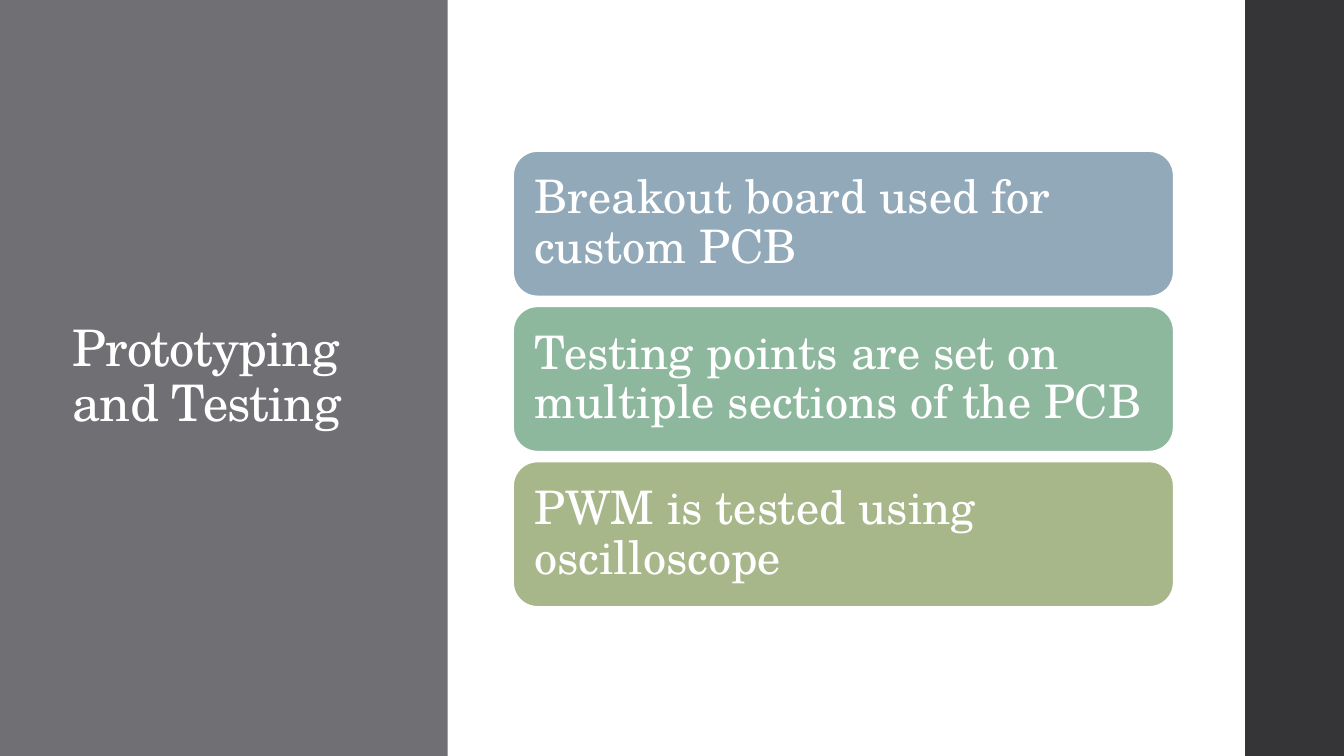
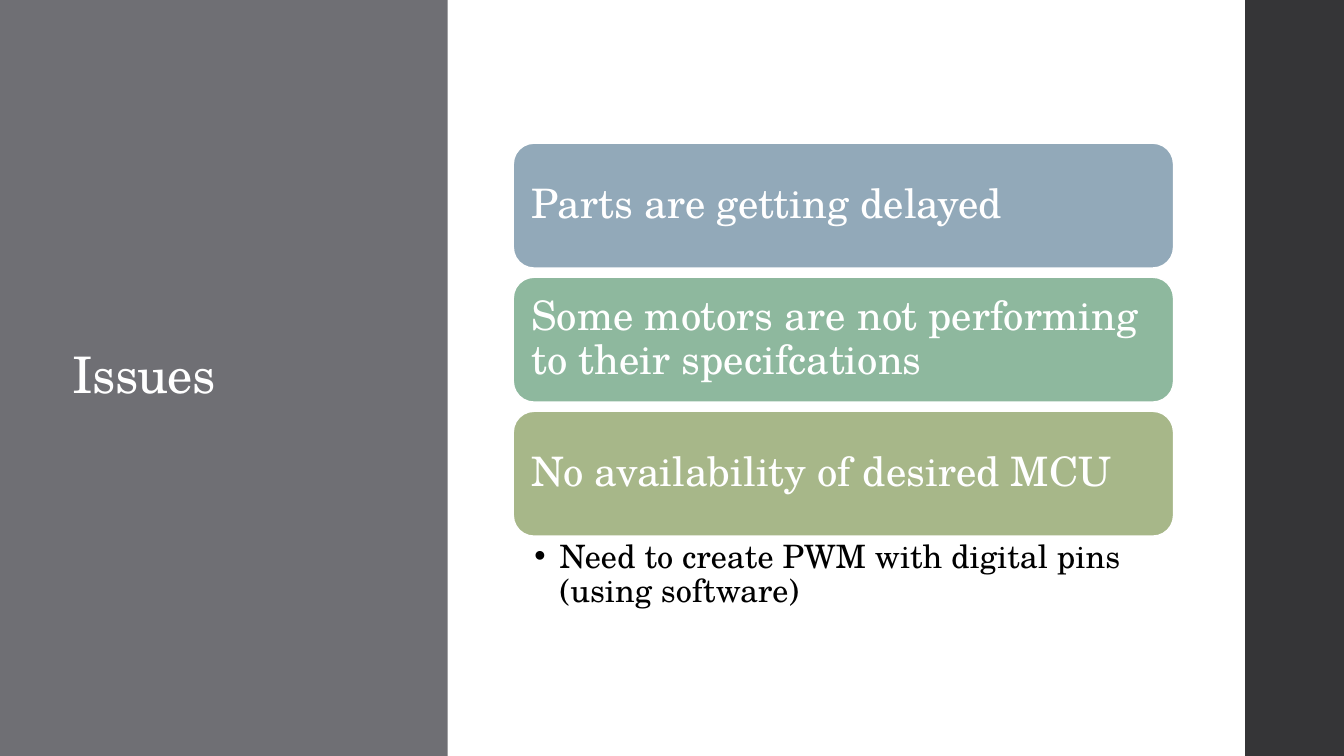
from dataclasses import dataclass

from pptx import Presentation
from pptx.dml.color import RGBColor
from pptx.enum.shapes import MSO_SHAPE
from pptx.enum.text import MSO_ANCHOR, MSO_AUTO_SIZE, PP_ALIGN
from pptx.util import Inches, Pt

SLIDE_WIDTH, SLIDE_HEIGHT = 13.33, 7.5
TITLE_ONLY, TITLE_AND_BODY = 5, 1


@dataclass(frozen=True)
class Theme:
    font: str = "TeX Gyre Schola"
    title_band: str = "6F6F74"
    edge_band: str = "353537"
    light: str = "FFFFFF"
    dark: str = "000000"
    cards: tuple = ("92A9B9", "8EB89E", "A7B789")
    title_size: int = 36
    large_card_size: int = 33
    card_size: int = 29
    detail_size: int = 23


THEME = Theme()


def write(frame, text, *, size, color, anchor=MSO_ANCHOR.MIDDLE,
          insets=(0.1, 0.05, 0.1, 0.05), tracking=0):
    """Fill a text frame with one left-aligned paragraph and return it."""
    frame.word_wrap = True
    frame.auto_size = MSO_AUTO_SIZE.NONE
    frame.vertical_anchor = anchor
    (frame.margin_left, frame.margin_top,
     frame.margin_right, frame.margin_bottom) = map(Inches, insets)
    paragraph = frame.paragraphs[0]
    paragraph.alignment = PP_ALIGN.LEFT
    paragraph.line_spacing = 0.9
    paragraph.space_before = Pt(0)
    run = paragraph.add_run()
    run.text = text
    run.font.name = THEME.font
    run.font.size = Pt(size)
    run.font.color.rgb = RGBColor.from_string(color)
    if tracking:
        run.font._element.set("spc", str(round(tracking * 100)))
    return paragraph


def place(shape, left, top, width, height):
    shape.left, shape.top = Inches(left), Inches(top)
    shape.width, shape.height = Inches(width), Inches(height)


class Deck:
    card_left, card_width = 5.09, 6.55

    def __init__(self, theme):
        self.theme = theme
        self.presentation = Presentation()
        self.presentation.slide_width = Inches(SLIDE_WIDTH)
        self.presentation.slide_height = Inches(SLIDE_HEIGHT)
        self.slide = None

    def new_slide(self, title, layout=TITLE_ONLY):
        layouts = self.presentation.slide_layouts
        self.slide = self.presentation.slides.add_slide(layouts[layout])
        self.band(0, 4.44, self.theme.title_band)
        self.band(12.35, SLIDE_WIDTH - 12.35, self.theme.edge_band)
        heading = self.slide.shapes.title
        place(heading, 0.62, 0.91, 2.97, 5.67)
        write(heading.text_frame, title, size=self.theme.title_size,
              color=self.theme.light, tracking=-0.5)

    def block(self, kind, left, top, width, height, fill):
        shape = self.slide.shapes.add_shape(
            kind, Inches(left), Inches(top), Inches(width), Inches(height))
        shape.shadow.inherit = False
        shape.fill.solid()
        shape.fill.fore_color.rgb = RGBColor.from_string(fill)
        shape.line.fill.background()
        return shape

    def band(self, left, width, fill):
        """Draw a full-height band behind the placeholders."""
        band = self.block(MSO_SHAPE.RECTANGLE, left, 0, width, SLIDE_HEIGHT, fill)
        self.slide.shapes.element.insert(2, band.element)

    def cards(self, statements, *, top, height, gap, size, inset):
        """Stack one card per statement and return the bottom of the last."""
        for row, (statement, fill) in enumerate(zip(statements, self.theme.cards)):
            card = self.block(MSO_SHAPE.ROUNDED_RECTANGLE, self.card_left,
                              top + row * (height + gap), self.card_width, height, fill)
            card.line.color.rgb = RGBColor.from_string(self.theme.light)
            card.line.width = Pt(1.1)
            write(card.text_frame, statement, size=size,
                  color=self.theme.light, insets=(inset,) * 4)
        return top + len(statements) * (height + gap) - gap

    def detail(self, text, top):
        """Put a bulleted remark in the body placeholder."""
        body = self.slide.placeholders[1]
        place(body, self.card_left, top, self.card_width, 0.79)
        paragraph = write(body.text_frame, text, size=self.theme.detail_size,
                          color=self.theme.dark, anchor=MSO_ANCHOR.TOP,
                          insets=(0.21, 0.04, 0.23, 0.04))
        properties = paragraph._p.get_or_add_pPr()
        properties.set("marL", str(Inches(0.25)))
        properties.set("indent", str(Inches(-0.25)))


def main():
    deck = Deck(THEME)

    deck.new_slide("Prototyping and Testing")
    deck.cards(
        ["Breakout board used for custom PCB",
         "Testing points are set on multiple sections of the PCB",
         "PWM is tested using oscilloscope"],
        top=1.5, height=1.44, gap=0.1, size=THEME.large_card_size, inset=0.14)

    deck.new_slide("Issues", TITLE_AND_BODY)
    cards_bottom = deck.cards(
        ["Parts are getting delayed",
         "Some motors are not performing to their specifcations",
         "No availability of desired MCU"],
        top=1.42, height=1.24, gap=0.09, size=THEME.card_size, inset=0.12)
    deck.detail("Need to create PWM with digital pins (using software)", cards_bottom)

    deck.presentation.save("out.pptx")


if __name__ == "__main__":
    main()
